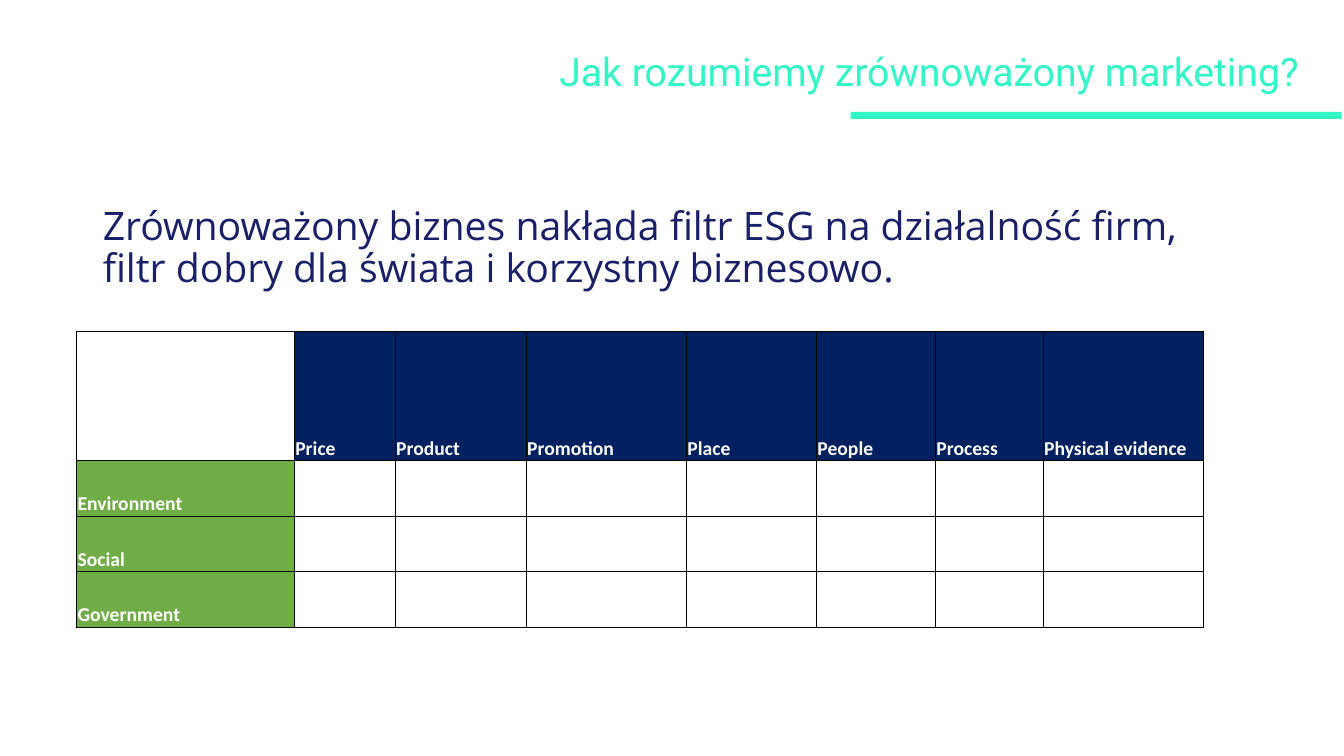
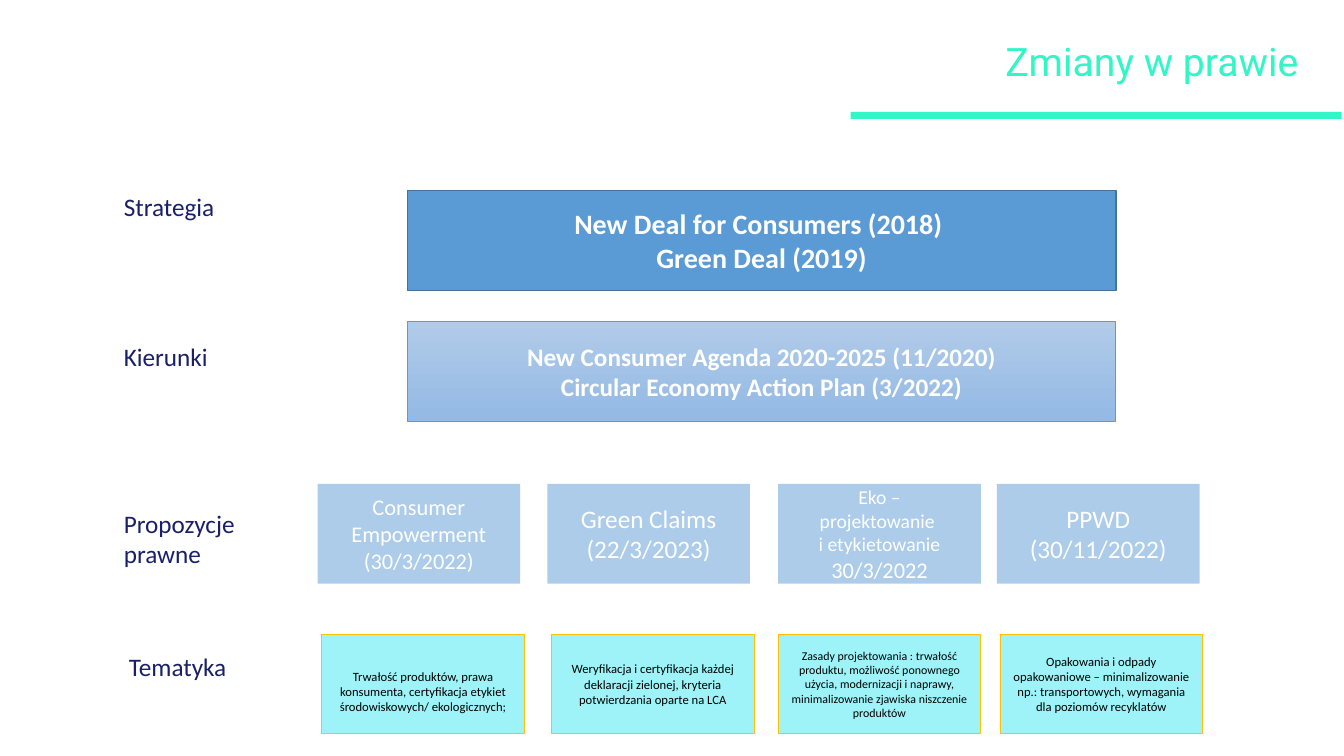
from collections import namedtuple

from lxml.etree import SubElement
from pptx import Presentation
from pptx.dml.color import RGBColor
from pptx.enum.shapes import MSO_SHAPE as Preset
from pptx.enum.text import MSO_ANCHOR as Anchor, MSO_AUTO_SIZE as AutoSize, PP_ALIGN as Align
from pptx.oxml.ns import qn
from pptx.util import Inches, Pt

CELL = Inches(0.1)
SLIDE_COLUMNS, SLIDE_ROWS = 133.33, 75

MINT = RGBColor(0x33, 0xF6, 0xC7)
INDIGO = RGBColor(0x19, 0x20, 0x68)
NAVY = RGBColor(0x00, 0x20, 0x60)
GREEN = RGBColor(0x70, 0xAD, 0x47)
BLUE = RGBColor(0x5B, 0x9B, 0xD5)
STEEL = RGBColor(0x43, 0x73, 0x9E)
PALE_TOP = RGBColor(0xB1, 0xCB, 0xE9)
PALE_BOTTOM = RGBColor(0x93, 0xB9, 0xE4)
AQUA = RGBColor(0x9D, 0xF3, 0xF7)
AMBER = RGBColor(0xFF, 0xC0, 0x00)
WHITE = RGBColor(0xFF, 0xFF, 0xFF)
BLACK = RGBColor(0x00, 0x00, 0x00)

TITLE_FORMAT = {"name": "Roboto", "size": Pt(28)}
LEAD_FORMAT = {"name": "Open Sans", "size": Pt(28)}
CELL_FORMAT = {"name": "Calibri", "size": Pt(14), "bold": True}
CELL_LAYOUT = {"vertical_anchor": Anchor.BOTTOM, "margin_left": Inches(0.01),
               "margin_right": Inches(0.01), "margin_top": Inches(0.01), "margin_bottom": 0}

Box = namedtuple("Box", "left top width height")

MATRIX_COLUMNS = (21.6, 10, 13, 15.9, 12.9, 11.8, 10.7, 15.9)
MATRIX_ROWS = (12.8, 5.5, 5.5, 5.5)
MATRIX_HEADERS = ("Price", "Product", "Promotion", "Place", "People", "Process", "Physical evidence")
MATRIX_LABELS = ("Environment", "Social", "Government")

ROW_LABELS = (
    ("Strategia", 11.3, 18.5, 4),
    ("Kierunki", 11.3, 33.4, 4),
    ("Propozycje prawne", 11.3, 49.9, 7.1),
    ("Tematyka", 11.8, 64.1, 4),
)
PROPOSALS = (
    (31.5, "Consumer Empowerment\n(30/3/2022)", (16,)),
    (54.3, "Green Claims\n(22/3/2023)", (18,)),
    (77.2, "Eko –\nprojektowanie \ni etykietowanie\n30/3/2022", (14, 14, 14, 16)),
    (98.9, "PPWD\n(30/11/2022)", (18,)),
)
TOPICS = (
    (31.9, "Trwałość produktów, prawa konsumenta, certyfikacja etykiet środowiskowych/ ekologicznych;", 9, 2),
    (54.7, "Weryfikacja i certyfikacja każdej deklaracji zielonej, kryteria potwierdzania oparte na LCA", 9, 0.5),
    (77.2, "Zasady projektowania : trwałość produktu, możliwość ponownego użycia, modernizacji i naprawy, "
           "minimalizowanie zjawiska niszczenie produktów", 8.5, 0.5),
    (99.2, "Opakowania i odpady opakowaniowe – minimalizowanie np.: transportowych, wymagania dla "
           "poziomów recyklatów", 9, 0.5),
)


def cells(count):
    """Convert grid cells to a slide length."""
    return int(count * CELL)


def place(box):
    """Convert a grid box to slide lengths."""
    return [cells(length) for length in box]


def set_all(target, values):
    """Set every attribute named in a dict of format values."""
    for name, value in values.items():
        setattr(target, name, value)


def format_paragraph(paragraph, font_format, color, **layout):
    """Format a paragraph and each of its runs."""
    set_all(paragraph, layout)
    for run in paragraph.runs:
        set_all(run.font, font_format)
        run.font.color.rgb = color


def fill_placeholder(placeholder, box, text, font_format, color, anchor, align):
    """Move a template placeholder and give it formatted text without a bullet."""
    set_all(placeholder, dict(zip(box._fields, place(box))))
    frame = placeholder.text_frame
    set_all(frame, {"text": text, "auto_size": AutoSize.NONE, "vertical_anchor": anchor, "word_wrap": True})
    paragraph = frame.paragraphs[0]
    properties = paragraph._p.get_or_add_pPr()
    properties.set("marL", "0")
    properties.set("indent", "0")
    SubElement(properties, qn("a:buNone"))
    format_paragraph(paragraph, font_format, color, alignment=align, line_spacing=0.9, space_before=Pt(0))


def add_title(slide, box, text):
    """Set the right-aligned slide title."""
    fill_placeholder(slide.shapes.title, box, text, TITLE_FORMAT, MINT, Anchor.MIDDLE, Align.RIGHT)


def add_rectangle(slide, box, fill, line=None, line_width=0.5):
    """Add a plain rectangle with an optional outline."""
    shape = slide.shapes.add_shape(Preset.RECTANGLE, *place(box))
    shape.shadow.inherit = False
    shape.fill.solid()
    shape.fill.fore_color.rgb = fill
    if line is None:
        shape.line.fill.background()
    else:
        shape.line.color.rgb = line
        shape.line.width = Pt(line_width)
    return shape


def write_centred(shape, text, sizes, color, bold=False):
    """Write centred lines, with the last size used for the remaining lines."""
    frame = shape.text_frame
    set_all(frame, {"text": text, "word_wrap": True, "vertical_anchor": Anchor.MIDDLE})
    for index, paragraph in enumerate(frame.paragraphs):
        size = sizes[min(index, len(sizes) - 1)]
        font_format = {"name": "Calibri", "size": Pt(size), "bold": bold}
        format_paragraph(paragraph, font_format, color, alignment=Align.CENTER)


def add_master_rule(presentation, slide):
    """Put the mint rule below the title on the slide master."""
    rule = add_rectangle(slide, Box(84.4, 11.1, 48.7, 0.7), MINT)
    presentation.slide_master.shapes.element.append(rule.element)


def border_cell(cell):
    """Draw thin black borders around a table cell."""
    properties = cell._tc.get_or_add_tcPr()
    for side in ("lnL", "lnR", "lnT", "lnB"):
        border = SubElement(properties, qn(f"a:{side}"), w=str(Pt(0.5)))
        solid = SubElement(border, qn("a:solidFill"))
        SubElement(solid, qn("a:srgbClr"), val=str(BLACK))


def add_matrix(slide, left, top):
    """Add the table of marketing elements against ESG areas."""
    box = Box(left, top, sum(MATRIX_COLUMNS), sum(MATRIX_ROWS))
    table = slide.shapes.add_table(len(MATRIX_ROWS), len(MATRIX_COLUMNS), *place(box)).table
    set_all(table, {"first_row": False, "horz_banding": False})
    for column, width in zip(table.columns, MATRIX_COLUMNS):
        column.width = cells(width)
    for row, height in zip(table.rows, MATRIX_ROWS):
        row.height = cells(height)
    headings = {(0, column): (text, NAVY) for column, text in enumerate(MATRIX_HEADERS, 1)}
    headings.update({(row, 0): (text, GREEN) for row, text in enumerate(MATRIX_LABELS, 1)})
    for row in range(len(MATRIX_ROWS)):
        for column in range(len(MATRIX_COLUMNS)):
            cell = table.cell(row, column)
            border_cell(cell)
            if (row, column) not in headings:
                cell.fill.background()
                continue
            text, color = headings[row, column]
            cell.text = text
            set_all(cell, CELL_LAYOUT)
            cell.fill.solid()
            cell.fill.fore_color.rgb = color
            format_paragraph(cell.text_frame.paragraphs[0], CELL_FORMAT, WHITE)


def add_row_labels(slide):
    """Name the levels of the law diagram on the left."""
    for text, left, top, height in ROW_LABELS:
        frame = slide.shapes.add_textbox(*place(Box(left, top, 20.1, height))).text_frame
        set_all(frame, {"text": text, "word_wrap": True, "auto_size": AutoSize.SHAPE_TO_FIT_TEXT})
        format_paragraph(frame.paragraphs[0], {"name": "Calibri", "size": Pt(18)}, INDIGO)


def add_banners(slide, left, width, height):
    """Add the strategy banner and the gradient banner of directions."""
    strategy = add_rectangle(slide, Box(left, 18.9, width, height), BLUE, STEEL, 1)
    write_centred(strategy, "New Deal for Consumers (2018) \nGreen Deal (2019)", (20,), WHITE, True)
    directions = add_rectangle(slide, Box(left, 31.9, width, height), PALE_TOP, BLUE)
    directions.fill.gradient()
    directions.fill.gradient_angle = 270
    for stop, color in zip(directions.fill.gradient_stops, (PALE_TOP, PALE_BOTTOM)):
        stop.color.rgb = color
    write_centred(directions, "New Consumer Agenda 2020-2025 (11/2020)\nCircular Economy Action Plan (3/2022)",
                  (18,), WHITE, True)


def add_proposals(slide, top, width, height):
    """Add the row of half-transparent proposal cards."""
    for left, text, sizes in PROPOSALS:
        card = add_rectangle(slide, Box(left, top, width, height), BLUE)
        color = card.fill._xPr.find(qn("a:solidFill")).find(qn("a:srgbClr"))
        SubElement(color, qn("a:alpha"), val="50000")
        write_centred(card, text, sizes, WHITE)


def add_topics(slide, top, width, height):
    """Add the row of topic cards."""
    for left, text, size, inset in TOPICS:
        card = add_rectangle(slide, Box(left, top, width, height), AQUA, AMBER)
        card.text_frame.margin_top = cells(inset)
        write_centred(card, text, (size,), BLACK)


def build_marketing_slide(slide):
    """Build the slide on sustainable marketing."""
    add_title(slide, Box(52.3, 0.9, 77.5, 12.8), "Jak rozumiemy zrównoważony marketing?")
    fill_placeholder(
        slide.placeholders[1], Box(9.2, 20, 115, 10.4),
        "Zrównoważony biznes nakłada filtr ESG na działalność firm, filtr dobry dla świata i korzystny biznesowo.",
        LEAD_FORMAT, INDIGO, Anchor.TOP, Align.LEFT)
    add_matrix(slide, 7.6, 32.9)


def build_law_slide(slide):
    """Build the slide on changes in the law."""
    add_title(slide, Box(49.9, -0.1, 79.9, 12.8), "Zmiany w prawie")
    add_row_labels(slide)
    add_banners(slide, 40.4, 70.3, 9.9)
    add_proposals(slide, 48, 20.1, 9.9)
    add_topics(slide, 62.9, 20.1, 9.9)


def main():
    """Build and save the presentation."""
    presentation = Presentation()
    presentation.slide_width = cells(SLIDE_COLUMNS)
    presentation.slide_height = cells(SLIDE_ROWS)
    layouts = presentation.slide_layouts
    marketing = presentation.slides.add_slide(layouts.get_by_name("Title and Content"))
    law = presentation.slides.add_slide(layouts.get_by_name("Title Only"))
    add_master_rule(presentation, marketing)
    build_marketing_slide(marketing)
    build_law_slide(law)
    presentation.save("out.pptx")


if __name__ == "__main__":
    main()
